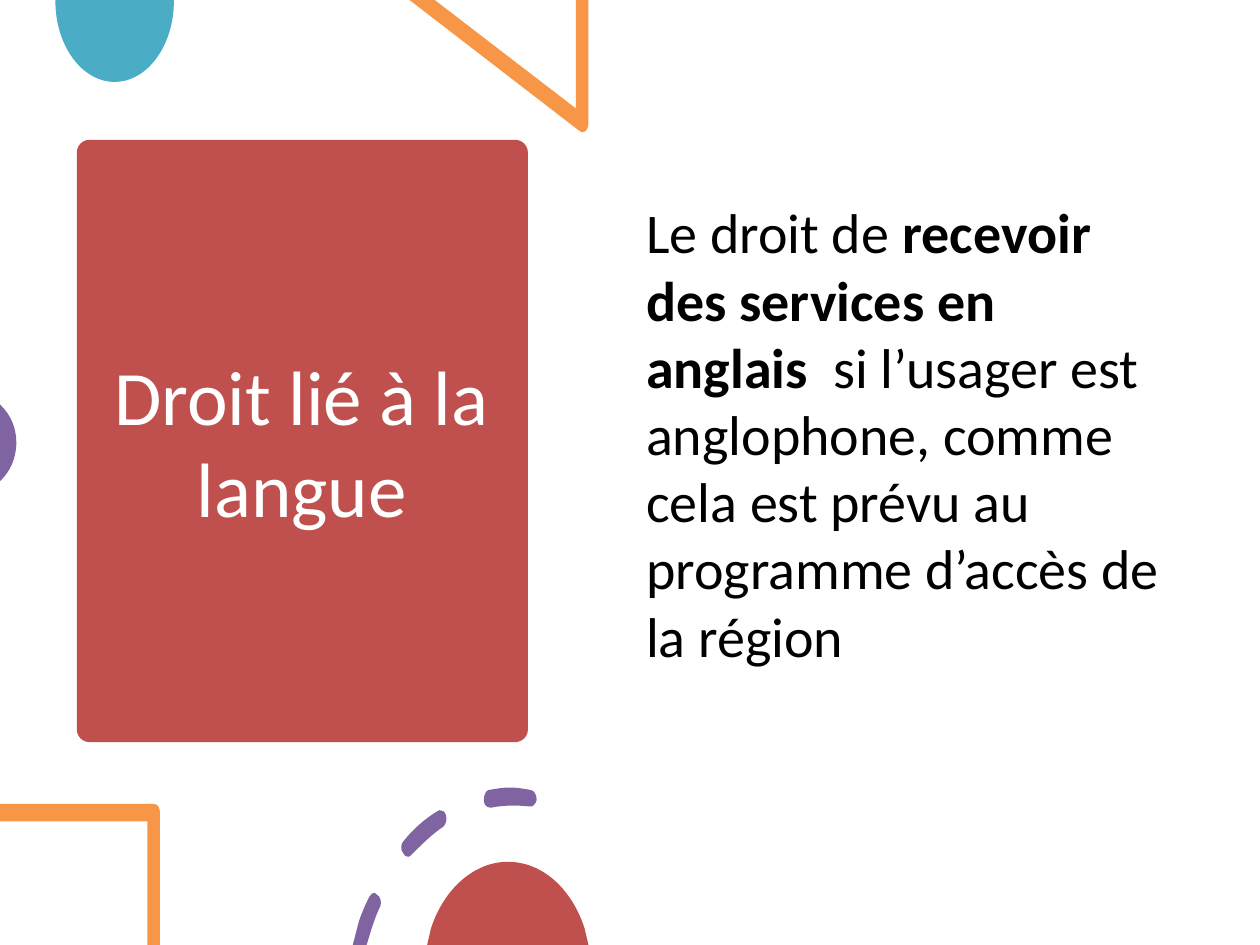
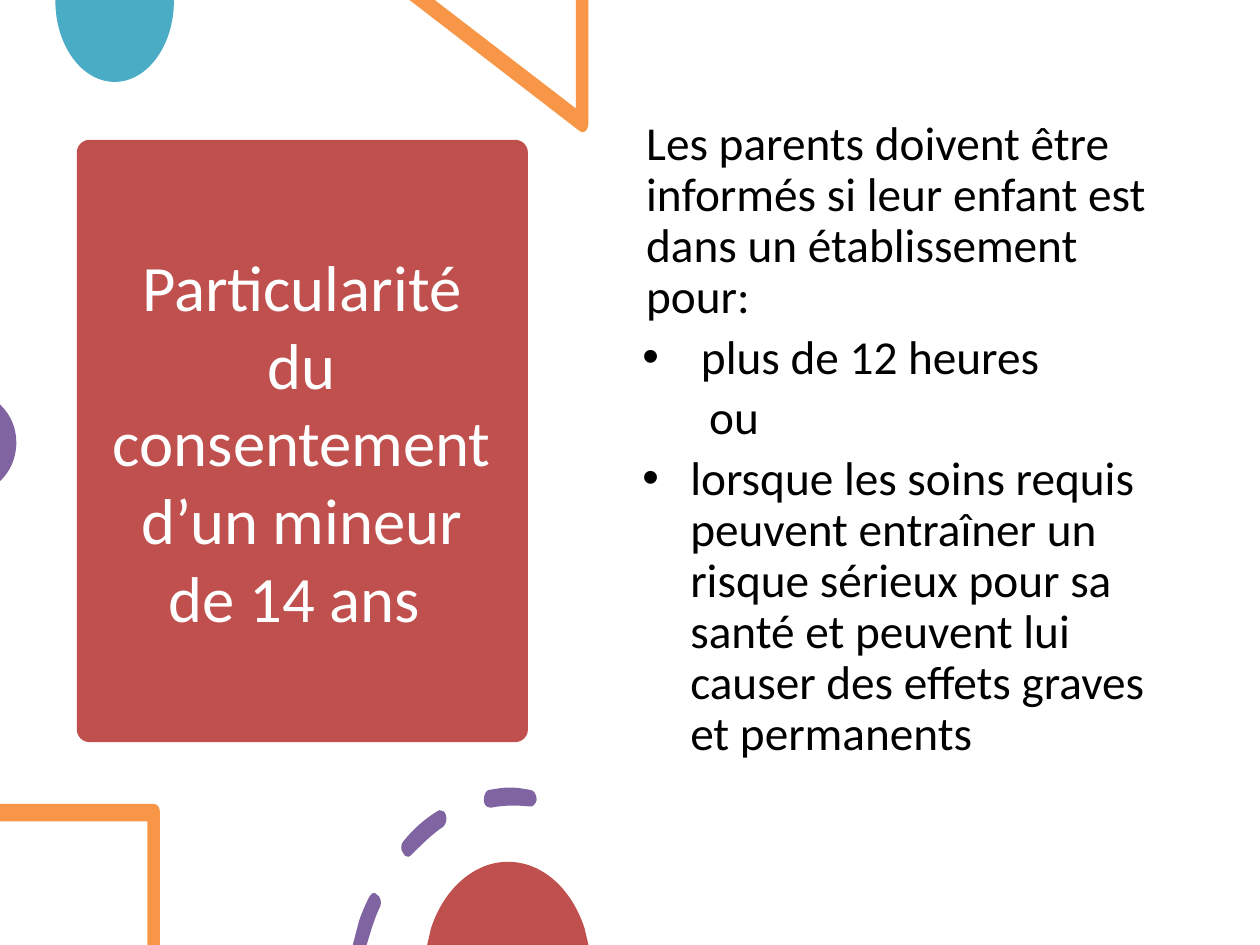
from pptx import Presentation
from pptx.dml.color import RGBColor
from pptx.enum import shapes, text
from pptx.oxml import parse_xml
from pptx.oxml.ns import nsdecls
from pptx.util import Inches, Pt

COLORS = {
    "red": "C0504D", "teal": "4BACC6", "orange": "F79646", "purple": "8064A2",
    "white": "FFFFFF", "black": "000000",
}
FONT = "Calibri"
TITLE_BLOCK = (0.61, 1.11, 3.58, 4.78)
TITLE_AREA = (0.78, 1.22, 3.23, 4.56)
BODY_AREA = (5, 0.9, 4.31, 5.35)
PLAIN, BULLET = (0.03, 0), (0.38, -0.38)  # left margin, first-line indent

# Each paragraph: (margin and indent, bulleted, runs); each run: (wording, bold).
SLIDES = [
    {
        "title": "Droit lié à la langue", "title_size": 44,
        "body_size": 32, "line_spacing": 1.0, "body_inset": 0.67,
        "body": [
            (PLAIN, False, [
                ("Le droit de ", False),
                ("recevoir des services en anglais", True),
                ("  si l’usager est anglophone, comme cela est prévu au "
                 "programme d’accès de la région", False),
            ]),
        ],
    },
    {
        "title": "Particularité du consentement d’un mineur de 14 ans ",
        "title_size": 37,
        "body_size": 27, "line_spacing": 0.9, "body_inset": 0.05,
        "body": [
            (PLAIN, False, [("Les parents doivent être informés si leur enfant "
                             "est dans un établissement pour:", False)]),
            (BULLET, True, [(" plus de 12 heures", False)]),
            (PLAIN, False, [("\tou", False)]),
            (BULLET, True, [("lorsque les soins requis peuvent entraîner un "
                             "risque sérieux pour sa santé et peuvent lui causer "
                             "des effets graves et permanents", False)]),
        ],
    },
]

# Each outline starts at a point; then pairs are lines and sixes Bézier curves.
TOP_ORNAMENTS = [
    ("teal", [[(1.38, 0), (0.44, 0), (0.44, 0.01),
               (0.44, 0.36, 0.65, 0.65, 0.91, 0.65),
               (1.17, 0.65, 1.38, 0.36, 1.38, 0.01)]]),
    ("orange", [[(4.67, 0), (4.57, 0), (4.57, 0.86), (3.45, 0), (3.25, 0),
                 (4.6, 1.04), (4.61, 1.05, 4.61, 1.05, 4.62, 1.05),
                 (4.65, 1.05, 4.67, 1.02, 4.67, 0.98)]]),
    ("purple", [[(0, 3.21), (0, 3.82), (0.01, 3.81),
                 (0.08, 3.74, 0.13, 3.64, 0.13, 3.51),
                 (0.13, 3.39, 0.08, 3.29, 0.01, 3.22)]]),
]
BOTTOM_ORNAMENTS = [
    ("orange", [[(1.22, 6.38), (0, 6.38), (0, 6.52), (1.17, 6.52), (1.17, 7.5),
                 (1.27, 7.5), (1.27, 6.45),
                 (1.27, 6.41, 1.25, 6.38, 1.22, 6.38)]]),
    ("purple", [
        [(2.98, 7.09), (2.96, 7.08, 2.94, 7.1, 2.93, 7.12),
         (2.9, 7.18, 2.87, 7.25, 2.85, 7.31), (2.8, 7.5), (2.91, 7.5),
         (2.95, 7.37), (2.97, 7.31, 2.99, 7.25, 3.02, 7.19),
         (3.03, 7.16, 3.02, 7.11, 2.99, 7.1),
         (2.99, 7.09, 2.98, 7.09, 2.98, 7.09)],
        [(3.49, 6.43), (3.48, 6.43, 3.48, 6.43, 3.47, 6.44),
         (3.37, 6.5, 3.28, 6.58, 3.2, 6.68), (3.18, 6.7, 3.18, 6.75, 3.2, 6.77),
         (3.21, 6.79, 3.22, 6.8, 3.24, 6.8), (3.24, 6.8),
         (3.25, 6.8, 3.26, 6.79, 3.27, 6.78),
         (3.35, 6.7, 3.43, 6.62, 3.52, 6.56), (3.54, 6.54, 3.55, 6.5, 3.54, 6.47),
         (3.53, 6.44, 3.51, 6.43, 3.49, 6.43)],
        [(4.05, 6.25), (3.99, 6.25, 3.94, 6.26, 3.88, 6.27),
         (3.86, 6.27, 3.84, 6.31, 3.84, 6.35),
         (3.84, 6.38, 3.86, 6.41, 3.89, 6.41),
         (3.89, 6.41, 3.9, 6.41, 3.9, 6.41),
         (4, 6.39, 4.1, 6.39, 4.2, 6.4), (4.23, 6.41, 4.25, 6.38, 4.26, 6.35),
         (4.26, 6.31, 4.24, 6.27, 4.21, 6.27),
         (4.21, 6.27, 4.21, 6.27, 4.21, 6.27),
         (4.16, 6.26, 4.1, 6.25, 4.05, 6.25)],
    ]),
    ("red", [[(4.03, 6.84), (3.76, 6.84, 3.52, 7.06, 3.42, 7.37), (3.39, 7.5),
              (4.67, 7.5), (4.64, 7.37), (4.54, 7.06, 4.31, 6.84, 4.03, 6.84)]]),
]


def rgb(color):
    return RGBColor.from_string(COLORS[color])


def paint(shape, color):
    shape.fill.solid()
    shape.fill.fore_color.rgb = rgb(color)
    shape.line.fill.background()
    shape.shadow.inherit = False


def bend(ornament, outlines):
    """Turn the straight segments that stand for curves into Bézier curves."""
    segments = [segment for outline in outlines for segment in outline[1:]]
    for line, segment in zip(ornament._element.xpath(".//a:lnTo"), segments):
        if len(segment) == 2:
            continue
        points = "".join(
            f'<a:pt x="{Inches(x) - ornament.left}" y="{Inches(y) - ornament.top}"/>'
            for x, y in zip(segment[::2], segment[1::2]))
        curve = parse_xml(
            f'<a:cubicBezTo {nsdecls("a")}>{points}</a:cubicBezTo>')
        line.getparent().replace(line, curve)


def add_ornaments(slide, ornaments):
    for color, outlines in ornaments:
        builder = None
        for outline in outlines:
            start, *ends = [tuple(map(Inches, segment[-2:])) for segment in outline]
            if builder is None:
                builder = slide.shapes.build_freeform(*start)
            else:
                builder.move_to(*start)
            builder.add_line_segments(ends, close=True)
        ornament = builder.convert_to_shape()
        bend(ornament, outlines)
        paint(ornament, color)


def add_text_frame(slide, area):
    frame = slide.shapes.add_textbox(*map(Inches, area)).text_frame
    frame.word_wrap = True
    return frame


def set_font(paragraph, size, color):
    paragraph.font.name = FONT
    paragraph.font.size = Pt(size)
    paragraph.font.color.rgb = rgb(color)


def add_title(slide, content):
    block = slide.shapes.add_shape(
        shapes.MSO_SHAPE.ROUNDED_RECTANGLE, *map(Inches, TITLE_BLOCK))
    block.adjustments[0] = 0.028
    paint(block, "red")
    frame = add_text_frame(slide, TITLE_AREA)
    frame.vertical_anchor = text.MSO_ANCHOR.MIDDLE
    title = frame.paragraphs[0]
    title.text = content["title"]
    title.alignment = text.PP_ALIGN.CENTER
    set_font(title, content["title_size"], "white")


def add_body(slide, content):
    frame = add_text_frame(slide, BODY_AREA)
    frame.margin_top = Inches(content["body_inset"])
    size = content["body_size"]
    for index, ((margin, indent), bulleted, runs) in enumerate(content["body"]):
        paragraph = frame.add_paragraph() if index else frame.paragraphs[0]
        paragraph.line_spacing = content["line_spacing"]
        if index:
            paragraph.space_before = Pt(0.2 * size)
        set_font(paragraph, size, "black")
        properties = paragraph._p.get_or_add_pPr()
        properties.set("marL", str(Inches(margin)))
        properties.set("indent", str(Inches(indent)))
        if bulleted:
            for mark in ('buFont {} typeface="Arial"', 'buChar {} char="•"'):
                properties.insert_element_before(
                    parse_xml(f'<a:{mark.format(nsdecls("a"))}/>'),
                    "a:tabLst", "a:defRPr", "a:extLst")
        for wording, bold in runs:
            run = paragraph.add_run()
            run.text = wording
            if bold:
                run.font.bold = True


def main():
    deck = Presentation()
    deck.slide_width, deck.slide_height = Inches(10), Inches(7.5)
    for content in SLIDES:
        slide = deck.slides.add_slide(deck.slide_layouts[6])
        slide.background.fill.solid()
        slide.background.fill.fore_color.rgb = rgb("white")
        add_title(slide, content)
        add_ornaments(slide, TOP_ORNAMENTS)
        add_body(slide, content)
        add_ornaments(slide, BOTTOM_ORNAMENTS)
    deck.save("out.pptx")


if __name__ == "__main__":
    main()
